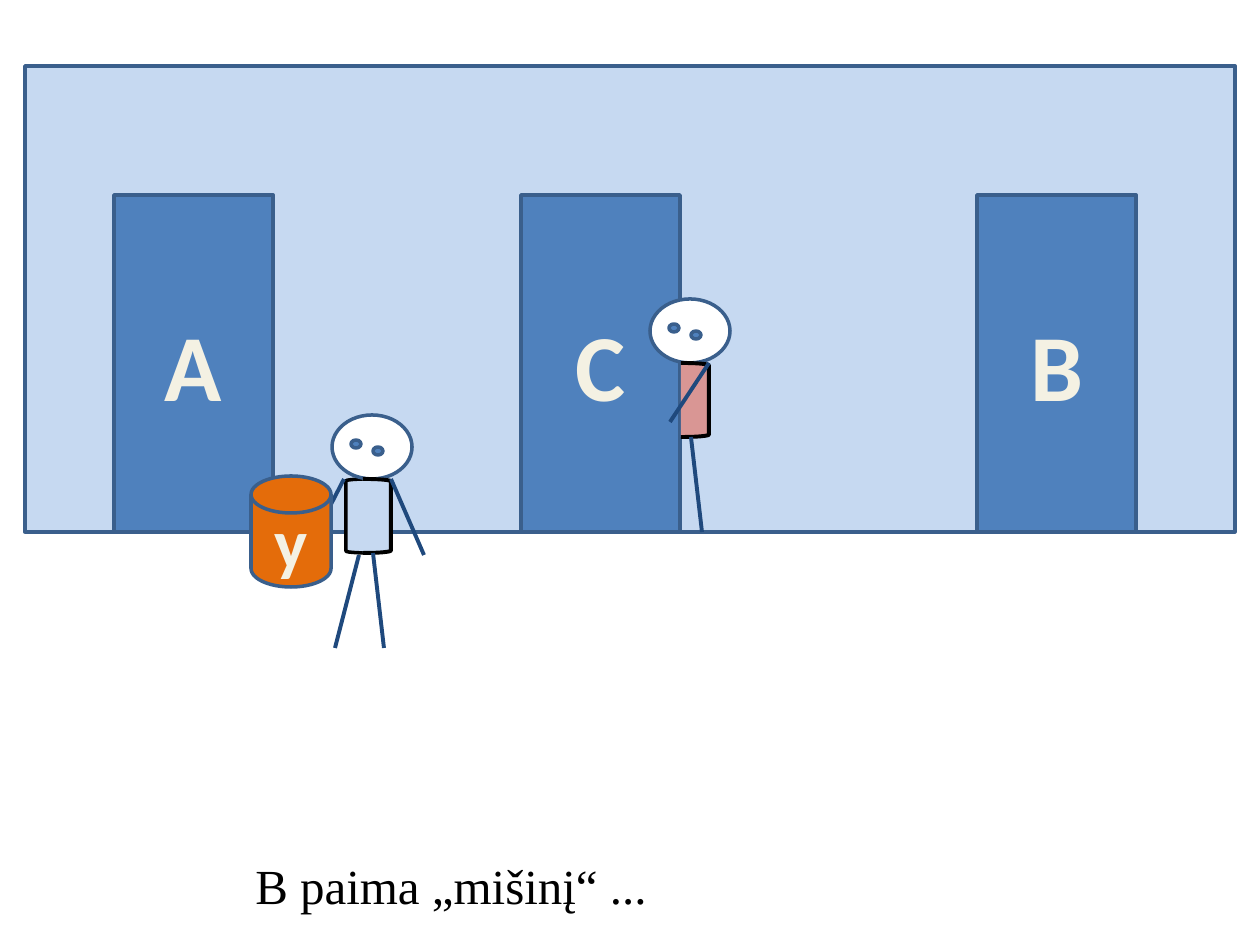
from typing import NamedTuple

from lxml import etree
from pptx import Presentation
from pptx.dml.color import RGBColor
from pptx.enum.shapes import MSO_CONNECTOR, MSO_SHAPE
from pptx.enum.text import MSO_ANCHOR, MSO_AUTO_SIZE, PP_ALIGN
from pptx.oxml.ns import qn
from pptx.util import Emu, Pt

RECT, OVAL = MSO_SHAPE.RECTANGLE, MSO_SHAPE.OVAL
LEFT, RIGHT = MSO_SHAPE.LEFT_BRACKET, MSO_SHAPE.RIGHT_BRACKET
DISK = MSO_SHAPE.FLOWCHART_MAGNETIC_DISK
STRAIGHT = MSO_CONNECTOR.STRAIGHT
MIDDLE, CENTER = MSO_ANCHOR.MIDDLE, PP_ALIGN.CENTER
FIT = MSO_AUTO_SIZE.SHAPE_TO_FIT_TEXT

SCALE = 914400 / 126  # EMU in one px
COLORS = {
    "wall": "C6D9F1", "door": "4F81BD", "edge": "3A5F8C", "limb": "1F497D",
    "pink": "D99694", "barrel": "E46C0A", "cream": "F4F1E3",
    "white": "FFFFFF", "black": "000000",
}


class Box(NamedTuple):
    x: int
    y: int
    w: int
    h: int


class Limb(NamedTuple):
    x1: int
    y1: int
    x2: int
    y2: int


class Person(NamedTuple):
    x: int
    y: int
    shirt: str
    limbs: list[Limb]
    back: bool  # the left half of the body shows too


def px(n: int) -> Emu:
    return Emu(round(n * SCALE))


def color(name: str) -> RGBColor:
    return RGBColor.from_string(COLORS[name])


def draw(shapes, kind, box: Box, fill: str, edge: str = "edge", width: float = 2):
    shape = shapes.add_shape(kind, *map(px, box))
    shape.shadow.inherit = False
    shape.fill.solid()
    shape.fill.fore_color.rgb = color(fill)
    shape.line.color.rgb = color(edge)
    shape.line.width = Pt(width)
    return shape


def write(shape, text: str, ink: str, **form) -> None:
    par = shape.text_frame.paragraphs[0]
    run = par.add_run()
    run.text = text
    for key, value in form.items():
        setattr(run.font, key, value)
    run.font.color.rgb = color(ink)


def label(shape, text: str, size: int) -> None:
    shape.text_frame.vertical_anchor = MIDDLE
    shape.text_frame.paragraphs[0].alignment = CENTER
    write(shape, text, "cream", name="Calibri", size=Pt(size), bold=True)


def draw_limb(shapes, x: int, y: int, limb: Limb) -> None:
    ends = (x + limb.x1, y + limb.y1, x + limb.x2, y + limb.y2)
    line = shapes.add_connector(STRAIGHT, *map(px, ends))
    line.line.color.rgb = color("limb")
    line.line.width = Pt(2.25)
    etree.SubElement(line._element.spPr, qn("a:effectLst"))


def draw_person(shapes, man: Person) -> None:
    x, y = man.x, man.y
    if man.back:
        draw(shapes, LEFT, Box(x + 14, y + 64, 23, 74), man.shirt, "black")
    draw(shapes, OVAL, Box(x, y, 80, 64), "white")
    for dx, dy in EYES:
        draw(shapes, OVAL, Box(x + dx, y + dy, 10, 8), "door")
    draw(shapes, RIGHT, Box(x + 31, y + 64, 28, 74), man.shirt, "black", 2.25)
    for limb in man.limbs:
        draw_limb(shapes, x, y, limb)


# Offsets of eyes and limbs are counted from the corner of the head
EYES = [(19, 25), (41, 32)]
LEG = Limb(41, 138, 52, 233)
PEEKER = Person(650, 299, "pink", [LEG, Limb(59, 64, 20, 123)], False)
CARRIER = Person(332, 415, "wall", [
    LEG, Limb(59, 64, 92, 140), Limb(27, 140, 3, 233), Limb(12, 64, -27, 140),
], True)
DOORS = {"A": 114, "B": 977, "C": 521}


def main() -> None:
    prs = Presentation()
    prs.slide_width, prs.slide_height = px(1260), px(945)
    shapes = prs.slides.add_slide(prs.slide_layouts[6]).shapes

    # Wall with three doors
    draw(shapes, RECT, Box(25, 66, 1210, 466), "wall")
    for name, x in DOORS.items():
        label(draw(shapes, RECT, Box(x, 195, 159, 337), "door"), name, 54)

    # One person behind door C, one with the barrel
    draw_person(shapes, PEEKER)
    draw_person(shapes.add_group_shape().shapes, CARRIER)
    label(draw(shapes, DISK, Box(251, 476, 80, 111), "barrel"), "y", 40)

    # Caption
    note = shapes.add_textbox(*map(px, Box(243, 849, 982, 72)))
    note.text_frame.word_wrap = True
    note.text_frame.auto_size = FIT
    write(note, "B paima „mišinį“ ...", "black", name="Times New Roman", size=Pt(28))

    prs.save("out.pptx")


if __name__ == "__main__":
    main()
